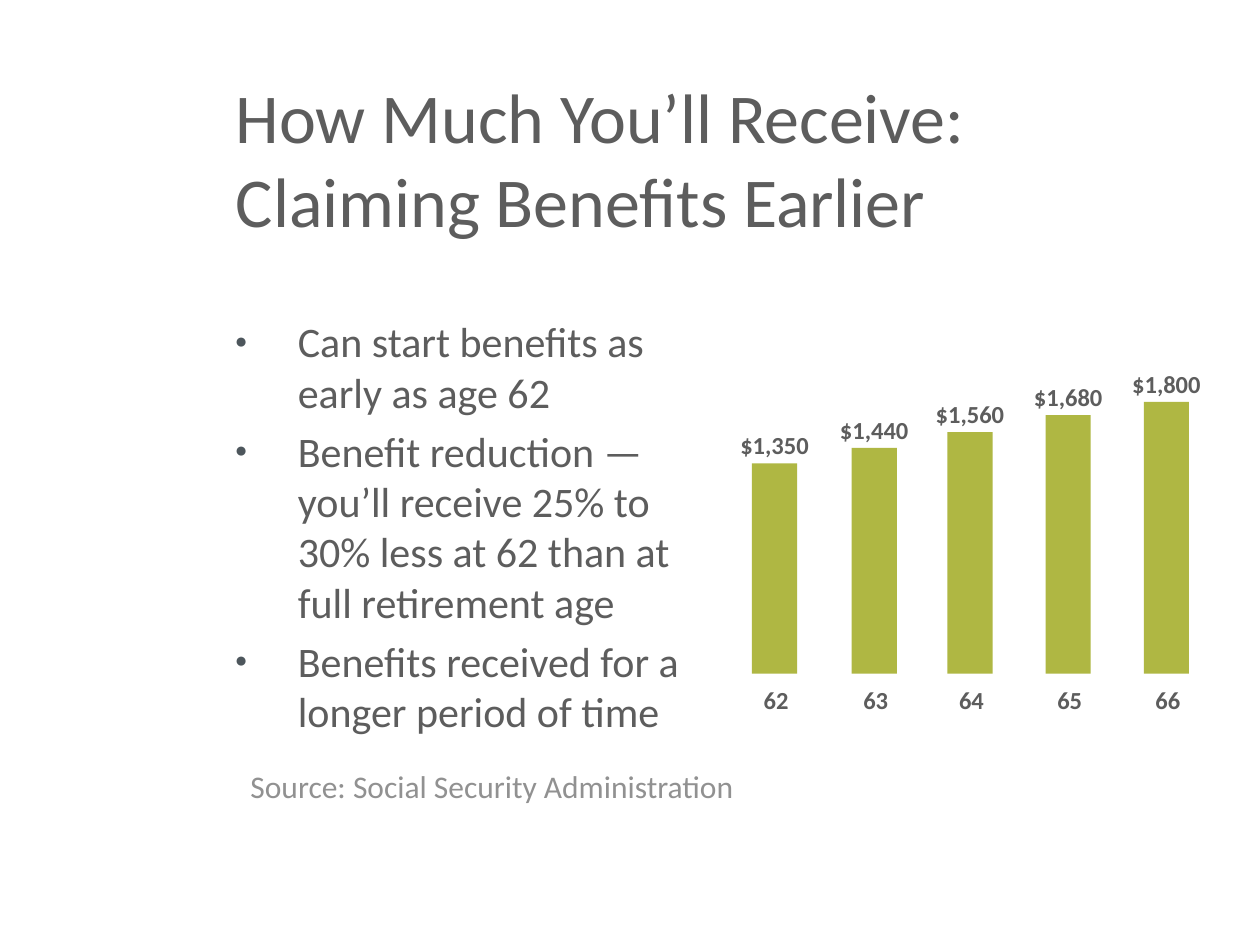
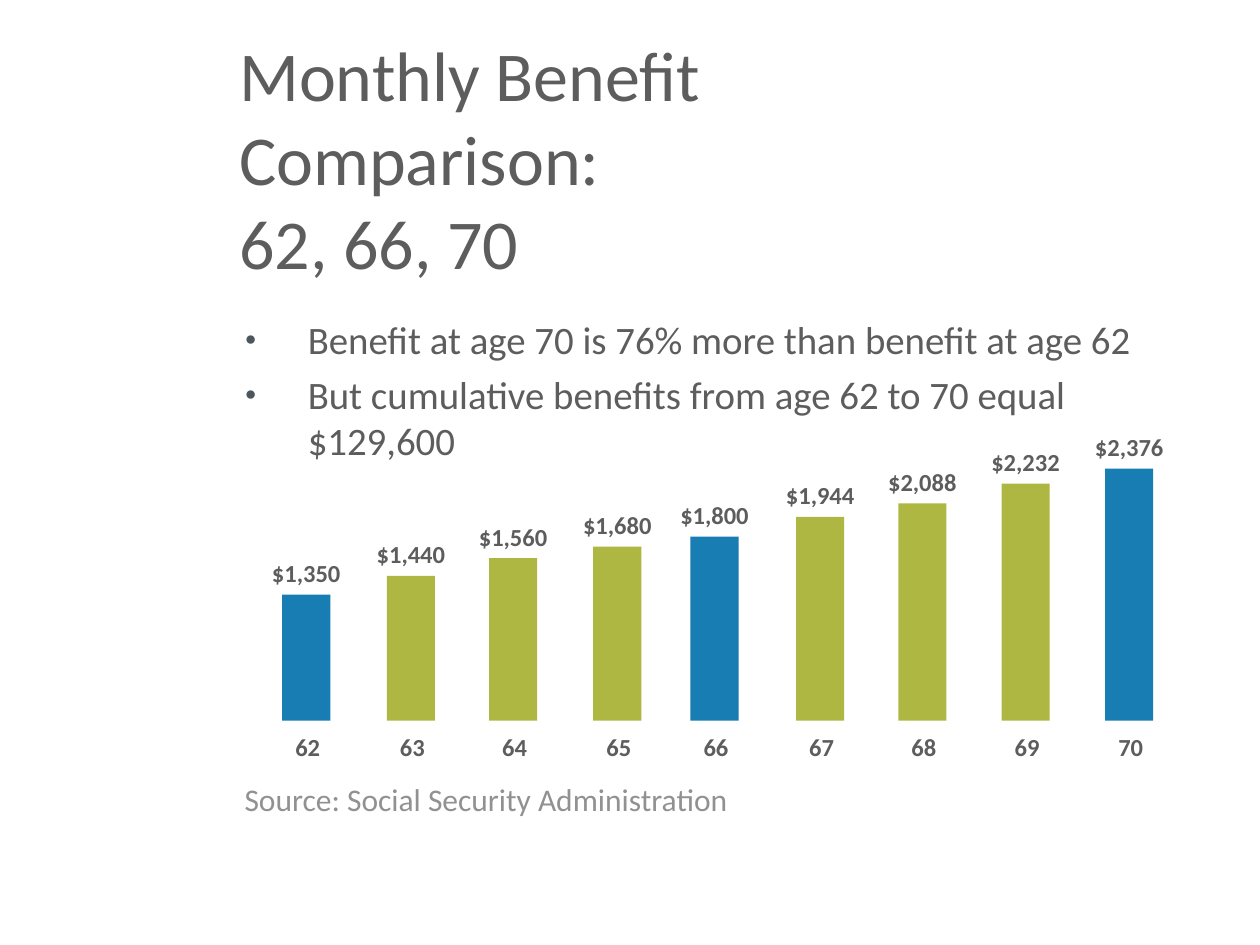
from dataclasses import dataclass

from lxml import etree
from pptx import Presentation
from pptx.dml.color import RGBColor
from pptx.enum.shapes import MSO_SHAPE
from pptx.enum.text import MSO_ANCHOR, MSO_AUTO_SIZE, PP_ALIGN
from pptx.oxml.ns import qn
from pptx.util import Cm, Pt

BLOCK = MSO_SHAPE.RECTANGLE
MIDDLE = MSO_ANCHOR.MIDDLE
FIXED = MSO_AUTO_SIZE.NONE
GROW = MSO_AUTO_SIZE.SHAPE_TO_FIT_TEXT
LEFT = PP_ALIGN.LEFT
CENTER = PP_ALIGN.CENTER


@dataclass(frozen=True)
class Theme:
    """Colours, font and type sizes of the deck."""
    font: str = "Calibri"
    ink: str = "5D5D5D"
    soft: str = "919191"
    dot: str = "4D565C"
    green: str = "AFB743"
    blue: str = "177DB3"
    title: float = 40
    body: float = 24
    tight: float = 22.2
    source: float = 18
    label: float = 14


THEME = Theme()
PAYS = [1350, 1440, 1560, 1680, 1800, 1944, 2088, 2232, 2376]
FIRST = 62


def style(font, size, color=THEME.ink, bold=False):
    """Set the look of a font."""
    font.name = THEME.font
    font.size = Pt(size)
    font.bold = bold
    font.color.rgb = RGBColor.from_string(color)


def place(shape, left, top, width, height):
    """Move and size a shape, in centimetres."""
    shape.left, shape.top = Cm(left), Cm(top)
    shape.width, shape.height = Cm(width), Cm(height)


def add_title(slide, text, left):
    """Fill the title placeholder."""
    shape = slide.shapes.title
    place(shape, left, 1.48, 17.2, 3.38)
    frame = shape.text_frame
    frame.auto_size = FIXED
    frame.vertical_anchor = MIDDLE
    para = frame.paragraphs[0]
    para.text = text
    para.alignment = LEFT
    for run in para.runs:
        style(run.font, THEME.title)


def add_dot(para):
    """Give a paragraph a small round bullet with a hanging indent."""
    props = para._p.get_or_add_pPr()
    props.set("marL", str(Cm(1.27)))
    props.set("indent", str(-Cm(1.27)))
    color = etree.SubElement(props, qn("a:buClr"))
    etree.SubElement(color, qn("a:srgbClr"), val=THEME.dot)
    etree.SubElement(props, qn("a:buSzPct"), val="50000")
    etree.SubElement(props, qn("a:buChar"), char="●")


def add_list(slide, items, box, size):
    """Fill the body placeholder with bullets."""
    shape = slide.placeholders[1]
    place(shape, *box)
    frame = shape.text_frame
    frame.auto_size = FIXED
    frame.text = "\n".join(items)
    for index, para in enumerate(frame.paragraphs):
        add_dot(para)
        para.space_before = Pt(size * 0.2 if index else 0)
        style(para.runs[0].font, size)


def add_text(shapes, text, box, size, color=THEME.ink, bold=False, wrap=False):
    """Add a one-line text box and return its paragraph."""
    frame = shapes.add_textbox(*map(Cm, box)).text_frame
    frame.word_wrap = wrap
    frame.auto_size = GROW
    frame.text = text
    para = frame.paragraphs[0]
    style(para.runs[0].font, size, color, bold)
    return para


def add_source(slide, left, top):
    """Add the source line."""
    add_text(slide.shapes, "Source: Social Security Administration",
             (left, top, 10.36, 1.02), THEME.source, THEME.soft)


def add_label(shapes, text, mid, top, width, wrap=False):
    """Add a bold label centred on a bar."""
    box = (mid - width / 2, top, width, 0.86)
    para = add_text(shapes, text, box, THEME.label, bold=True, wrap=wrap)
    para.alignment = CENTER


def add_bar(shapes, box, color):
    """Add one plain bar."""
    bar = shapes.add_shape(BLOCK, *map(Cm, box))
    bar.shadow.inherit = False
    bar.fill.solid()
    bar.fill.fore_color.rgb = RGBColor.from_string(color)
    bar.line.fill.background()


def add_bars(slide, bars, base, width, lift, marks=()):
    """Group bars given by left and height, with marked ages in blue."""
    shapes = slide.shapes.add_group_shape().shapes
    for age, (pay, (left, high)) in enumerate(zip(PAYS, bars), FIRST):
        color = THEME.blue if age in marks else THEME.green
        mid, top = left + width / 2, base - high
        add_bar(shapes, (left, top, width, high), color)
        add_label(shapes, f"${pay:,}", mid, top - lift, 1.9)
        add_label(shapes, str(age), mid + 0.03, base + 0.11, 1.3, wrap=True)


def add_early(deck):
    """Build the slide on claiming early."""
    slide = deck.slides.add_slide(deck.slide_layouts[1])
    add_title(slide, "How Much You’ll Receive:\nClaiming Benefits Earlier", 4.5)
    add_list(slide, [
        "Can start benefits as early as age 62",
        "Benefit reduction —you’ll receive 25% to 30% less at 62 "
        "than at full retirement age",
        "Benefits received for a longer period of time",
    ], (4.48, 6.24, 9.8, 9.32), THEME.body)
    bars = [(15.16, 4.24), (17.17, 4.55), (19.1, 4.87), (21.08, 5.21),
            (23.06, 5.48)]
    add_bars(slide, bars, 13.58, 0.91, 0.79)
    add_source(slide, 4.8, 15.34)


def add_compare(deck):
    """Build the slide that compares ages 62, 66 and 70."""
    slide = deck.slides.add_slide(deck.slide_layouts[1])
    add_title(slide, "Monthly Benefit Comparison:\n62, 66, 70", 4.57)
    add_list(slide, [
        "Benefit at age 70 is 76% more than benefit at age 62",
        "But cumulative benefits from age 62 to 70 equal $129,600",
    ], (4.68, 6.24, 19.15, 3.15), THEME.tight)
    bars = [(5.69, 2.54), (7.8, 2.92), (9.86, 3.28), (11.96, 3.51),
            (13.92, 3.71), (16.05, 4.11), (18.11, 4.38), (20.19, 4.78),
            (22.28, 5.08)]
    add_bars(slide, bars, 14.53, 0.97, 0.86, (62, 66, 70))
    add_source(slide, 4.68, 15.6)


def main():
    """Build and save the deck."""
    deck = Presentation()
    deck.slide_width, deck.slide_height = Cm(25.4), Cm(19.05)
    add_early(deck)
    add_compare(deck)
    deck.save("out.pptx")


if __name__ == "__main__":
    main()
